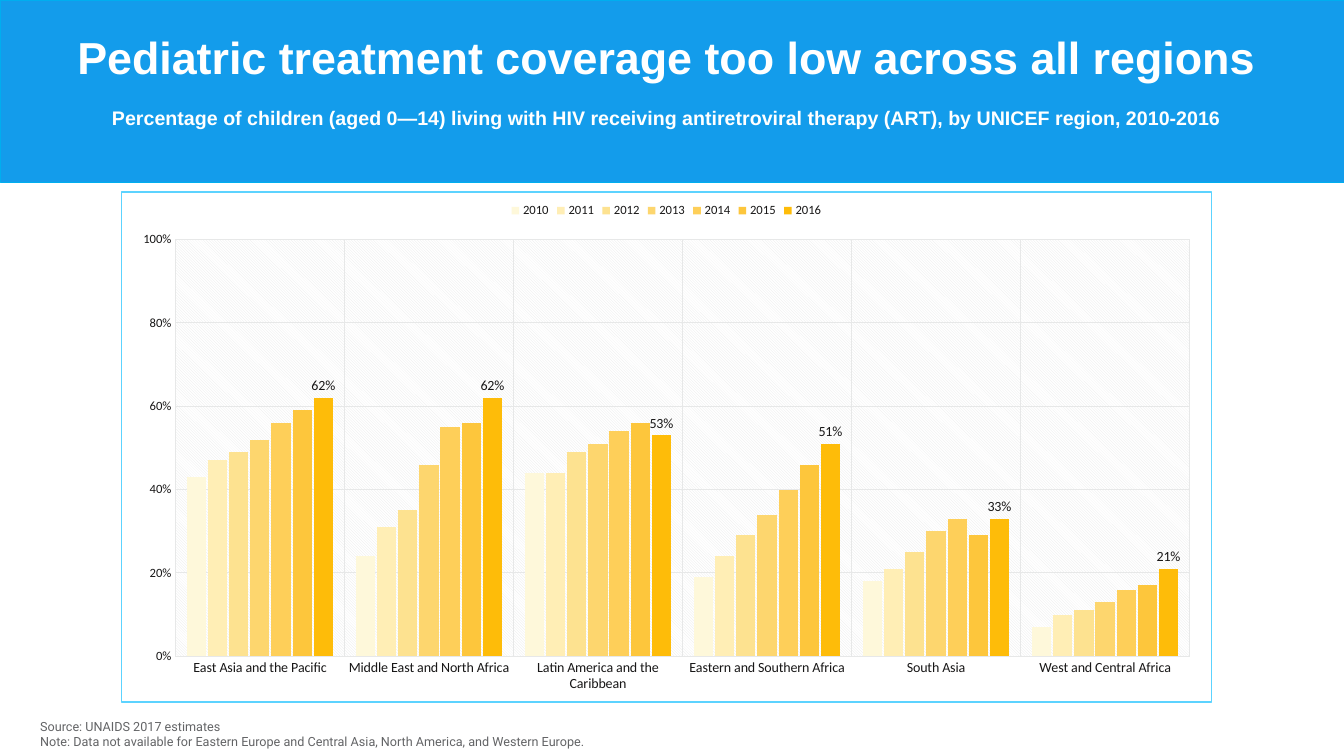
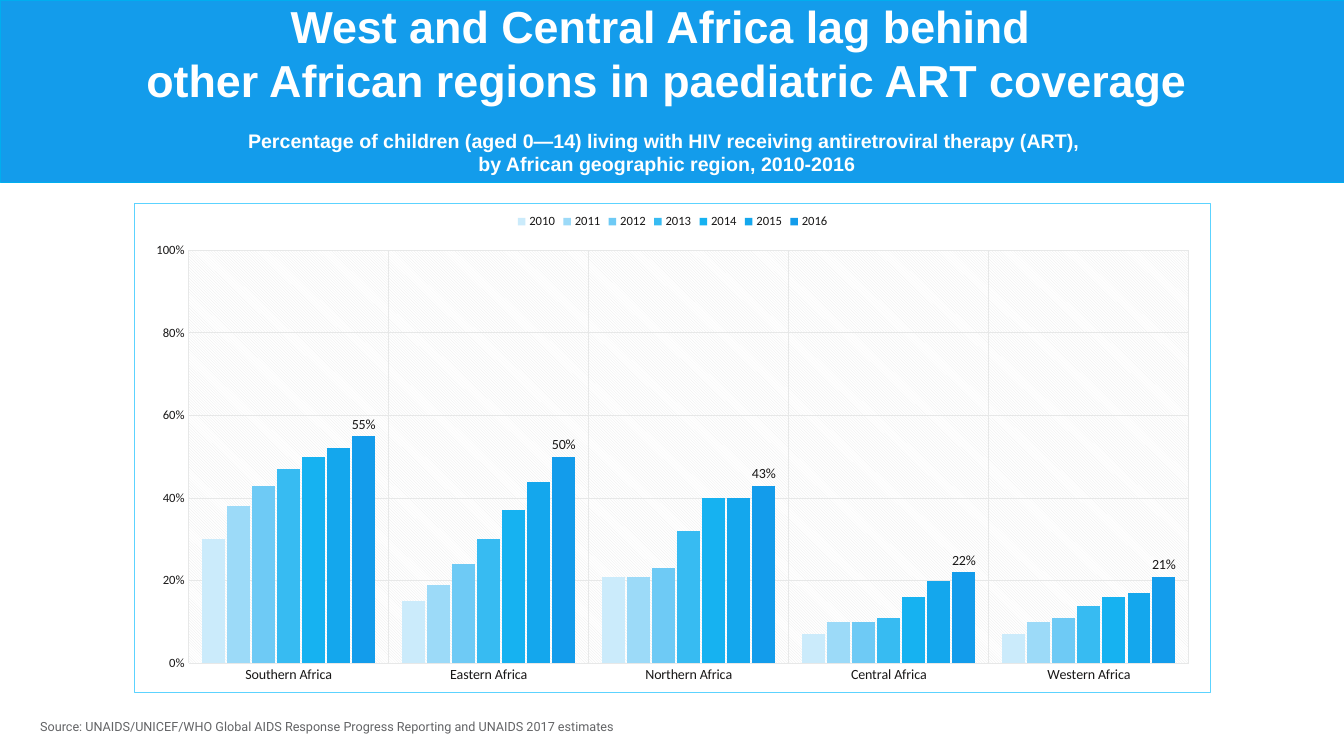
from pptx import Presentation
from pptx.chart.data import CategoryChartData
from pptx.dml.color import RGBColor
from pptx.enum.chart import (XL_CHART_TYPE, XL_LABEL_POSITION,
                             XL_LEGEND_POSITION, XL_TICK_MARK)
from pptx.enum.shapes import MSO_SHAPE
from pptx.enum.text import PP_ALIGN
from pptx.oxml import parse_xml
from pptx.util import Inches, Pt

# Slide size and shared colours
SLIDE_WIDTH, SLIDE_HEIGHT = Inches(13.33), Inches(7.5)
BLUE = RGBColor(0x13, 0x9C, 0xEB)
BAND_EDGE = RGBColor(0x00, 0xAE, 0xEF)
CHART_EDGE = RGBColor(0x5C, 0xD3, 0xFF)
WHITE = RGBColor(0xFF, 0xFF, 0xFF)
GRAY = RGBColor(0x63, 0x64, 0x66)
INK = RGBColor(0x18, 0x17, 0x17)
GRID = RGBColor(0xE7, 0xE8, 0xE8)
YELLOWS = [RGBColor.from_string(shade) for shade in
           "FEF8DA FFEEB5 FDE290 FDD66E FECF59 FDC63C FEBC09".split()]
BLUES = [RGBColor.from_string(shade) for shade in
         "CBEBFB 9CDAF8 6ECAF5 37BBF2 16B2F1 14A7ED".split()] + [BLUE]

# Text formats
TITLE = {"name": "Arial", "size": Pt(32), "bold": True, "color": WHITE}
SUBTITLE = {**TITLE, "size": Pt(14)}
FOOTNOTE = {"name": "Roboto", "size": Pt(9), "color": GRAY}
CHART_TEXT = {"name": "Calibri", "size": Pt(10), "color": GRAY}
CATEGORY_TEXT = {**CHART_TEXT, "color": INK}
SMALL_TEXT = {**CATEGORY_TEXT, "size": Pt(9)}

# Chart content: region -> coverage in percent for each year
YEARS = range(2010, 2017)
UNICEF_REGIONS = {
    "East Asia and the Pacific": (43, 47, 49, 52, 56, 59, 62),
    "Middle East and North Africa": (24, 31, 35, 46, 55, 56, 62),
    "Latin America and the Caribbean": (44, 44, 49, 51, 54, 56, 53),
    "Eastern and Southern Africa": (19, 24, 29, 34, 40, 46, 51),
    "South Asia": (18, 21, 25, 30, 33, 29, 33),
    "West and Central Africa": (7, 10, 11, 13, 16, 17, 21),
}
AFRICAN_REGIONS = {
    "Southern Africa": (30, 38, 43, 47, 50, 52, 55),
    "Eastern Africa": (15, 19, 24, 30, 37, 44, 50),
    "Northern Africa": (21, 21, 23, 32, 40, 40, 43),
    "Central Africa": (7, 10, 10, 11, 16, 20, 22),
    "Western Africa": (7, 10, 11, 14, 16, 17, 21),
}

NAMESPACES = ('xmlns:c="http://schemas.openxmlformats.org/drawingml/2006/chart" '
              'xmlns:a="http://schemas.openxmlformats.org/drawingml/2006/main"')


def place(left, top, width, height):
    """Turn percentages of the slide into lengths."""
    sides = (SLIDE_WIDTH, SLIDE_HEIGHT) * 2
    return [int(side * share / 100)
            for side, share in zip(sides, (left, top, width, height))]


def set_font(font, text_format):
    for name, value in text_format.items():
        if name == "color":
            font.color.rgb = value
        else:
            setattr(font, name, value)


def set_line(line, color, width):
    line.color.rgb = color
    line.width = Pt(width)


def add_band(slide):
    band = slide.shapes.add_shape(MSO_SHAPE.RECTANGLE, *place(0, 0, 100, 24.13))
    band.shadow.inherit = False
    band.fill.solid()
    band.fill.fore_color.rgb = BLUE
    set_line(band.line, BAND_EDGE, 0.5)


def add_text(slide, position, blocks, alignment):
    """Write blocks of (lines, format, space before the block)."""
    text_frame = slide.shapes.add_textbox(*place(*position)).text_frame
    text_frame.word_wrap = True
    paragraph = text_frame.paragraphs[0]
    for lines, text_format, gap in blocks:
        for number, line in enumerate(lines):
            if paragraph.runs:
                paragraph = text_frame.add_paragraph()
            paragraph.alignment = alignment
            paragraph.space_before = Pt(0 if number else gap)
            run = paragraph.add_run()
            run.text = line
            set_font(run.font, text_format)


def add_heading(slide, top, title, subtitle):
    add_text(slide, (4.5, top, 90.25, 20),
             [(title, TITLE, 0), (subtitle, SUBTITLE, 16)], PP_ALIGN.CENTER)


def add_footnote(slide, lines):
    add_text(slide, (2.25, 94.4, 52.5, 5.3), [(lines, FOOTNOTE, 0)], PP_ALIGN.LEFT)


def style_axis(axis, text_format):
    axis.major_tick_mark = axis.minor_tick_mark = XL_TICK_MARK.NONE
    axis.has_major_gridlines = True
    set_line(axis.major_gridlines.format.line, GRID, 0.75)
    set_font(axis.tick_labels.font, text_format)


def fill_chart(chart):
    """Give the plot a hatched fill and the chart a white one with a border."""
    chart_space = chart.element
    plot_area = chart_space.find(".//{*}plotArea")
    plot_area.append(parse_xml(
        f'<c:spPr {NAMESPACES}><a:pattFill prst="ltDnDiag">'
        f'<a:fgClr><a:srgbClr val="{GRID}"/></a:fgClr>'
        f'<a:bgClr><a:srgbClr val="{WHITE}"/></a:bgClr></a:pattFill></c:spPr>'))
    chart_space.find("{*}txPr").addprevious(parse_xml(
        f'<c:spPr {NAMESPACES}><a:solidFill><a:srgbClr val="{WHITE}"/></a:solidFill>'
        f'<a:ln w="{Pt(0.75)}"><a:solidFill><a:srgbClr val="{CHART_EDGE}"/>'
        '</a:solidFill></a:ln></c:spPr>'))


def add_coverage_chart(slide, position, regions, shades):
    data = CategoryChartData(number_format="0%")
    data.categories = list(regions)
    for year, coverage in zip(YEARS, zip(*regions.values())):
        data.add_series(str(year), [percent / 100 for percent in coverage])
    chart = slide.shapes.add_chart(
        XL_CHART_TYPE.COLUMN_CLUSTERED, *place(*position), data).chart
    set_font(chart.font, CHART_TEXT)
    chart.has_title = False
    fill_chart(chart)

    # Legend
    chart.has_legend = True
    chart.legend.position = XL_LEGEND_POSITION.TOP
    chart.legend.include_in_layout = False
    set_font(chart.legend.font, SMALL_TEXT)

    # Axes
    style_axis(chart.category_axis, CATEGORY_TEXT)
    set_line(chart.category_axis.format.line, GRID, 0.75)
    value_axis = chart.value_axis
    style_axis(value_axis, SMALL_TEXT)
    value_axis.format.line.fill.background()
    scale = {"minimum_scale": 0, "maximum_scale": 1, "major_unit": 0.2}
    for name, value in scale.items():
        setattr(value_axis, name, value)
    value_axis.tick_labels.number_format = "0%"
    value_axis.tick_labels.number_format_is_linked = False

    # Columns, with labels on the latest year
    plot = chart.plots[0]
    plot.gap_width, plot.overlap, plot.vary_by_categories = 120, -10, False
    for series, shade in zip(plot.series, shades):
        series.format.fill.solid()
        series.format.fill.fore_color.rgb = shade
    labels = plot.series[len(YEARS) - 1].data_labels
    label_format = {"show_value": True, "position": XL_LABEL_POSITION.OUTSIDE_END,
                    "number_format": "0%", "number_format_is_linked": False}
    for name, value in label_format.items():
        setattr(labels, name, value)
    set_font(labels.font, CATEGORY_TEXT)


def add_coverage_slide(presentation, heading, chart, footnote):
    slide = presentation.slides.add_slide(presentation.slide_layouts[6])
    add_band(slide)
    add_heading(slide, *heading)
    add_coverage_chart(slide, *chart)
    add_footnote(slide, footnote)


def main():
    presentation = Presentation()
    presentation.slide_width, presentation.slide_height = SLIDE_WIDTH, SLIDE_HEIGHT

    # World regions
    add_coverage_slide(
        presentation,
        (3.33, ["Pediatric treatment coverage too low across all regions"],
         ["Percentage of children (aged 0—14) living with HIV receiving "
          "antiretroviral therapy (ART), by UNICEF region, 2010-2016"]),
        ((9, 25.33, 81.17, 67.6), UNICEF_REGIONS, YELLOWS),
        ["Source: UNAIDS 2017 estimates",
         "Note: Data not available for Eastern Europe and Central Asia, "
         "North America, and Western Europe."])

    # African regions
    add_coverage_slide(
        presentation,
        (-0.8, ["West and Central Africa lag behind ",
                "other African regions in paediatric ART coverage"],
         ["Percentage of children (aged 0—14) living with HIV receiving "
          "antiretroviral therapy (ART), ",
          "by African geographic region, 2010-2016"]),
        ((10, 26.8, 80.1, 64.93), AFRICAN_REGIONS, BLUES),
        ["Source: UNAIDS/UNICEF/WHO Global AIDS Response Progress Reporting "
         "and UNAIDS 2017 estimates"])

    presentation.save("out.pptx")


if __name__ == "__main__":
    main()
